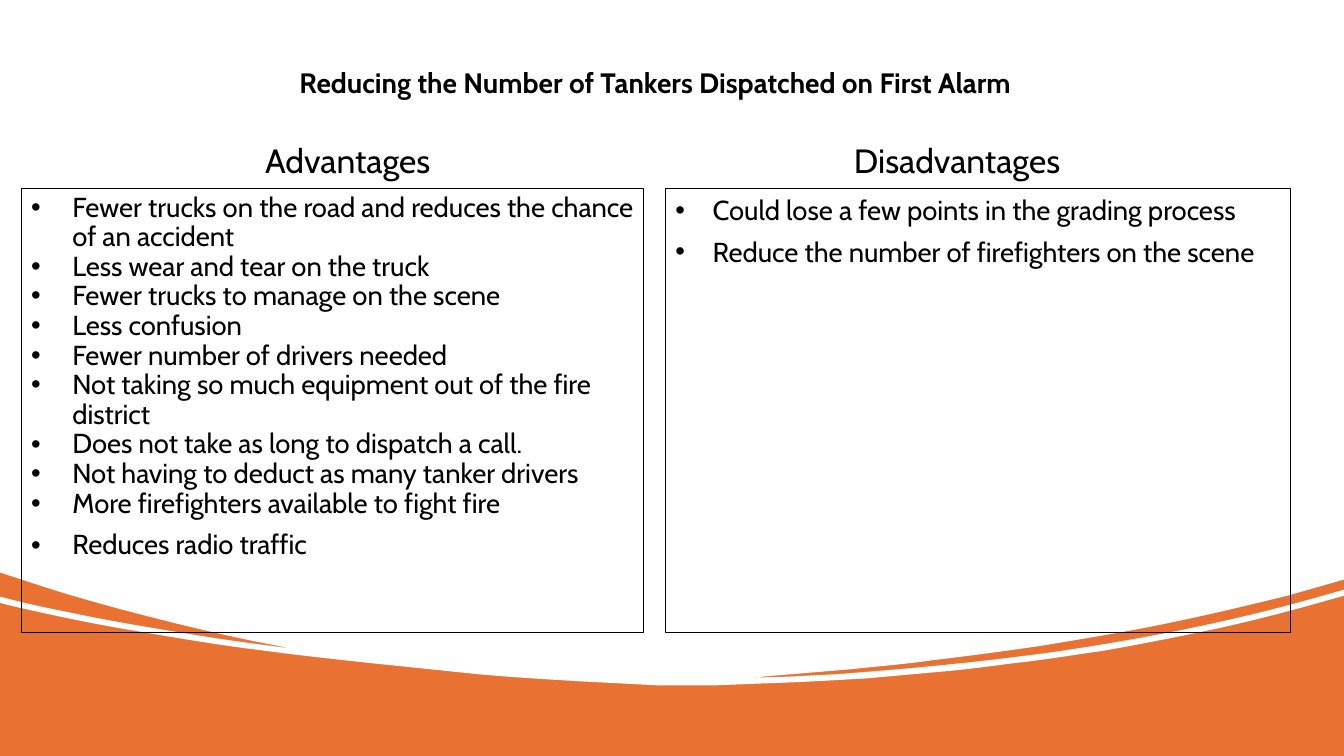
from dataclasses import dataclass

import pptx
import pptx.dml.color
import pptx.enum.shapes
import pptx.enum.text
import pptx.oxml
import pptx.oxml.ns
import pptx.util
from pptx.util import Inches

COLORS = {"orange": "E97132", "white": "FFFFFF", "black": "000000"}
FONT = "Cabin"
BODY_SIZE = 19.6
HEADING_TOP, HEADING_HEIGHT = 1.34, 0.53
PANEL_TOP, PANEL_HEIGHT = 1.87, 4.41
UNITS_PER_INCH = 1000  # resolution of the outline

# White area above the swooshes: pairs are line ends, sixes are Bezier curves
WHITE_AREA = [
    (0, 0), (13.33, 0), (13.33, 5.75), (13.19, 5.79),
    (13.05, 5.83, 12.91, 5.87, 12.77, 5.91),
    (12.32, 6.02, 11.86, 6.13, 11.4, 6.22),
    (11.04, 6.29, 10.67, 6.35, 10.31, 6.41),
    (9.96, 6.46, 9.6, 6.51, 9.25, 6.55),
    (8.98, 6.59, 8.71, 6.61, 8.44, 6.64),
    (7.6, 6.71), (7.43, 6.73),
    (7.46, 6.73, 7.49, 6.73, 7.53, 6.72),
    (7.78, 6.72, 8.04, 6.7, 8.29, 6.69),
    (8.67, 6.66, 9.05, 6.63, 9.43, 6.59),
    (9.74, 6.56, 10.06, 6.52, 10.37, 6.48),
    (10.79, 6.42, 11.21, 6.35, 11.62, 6.27),
    (12.13, 6.17, 12.63, 6.05, 13.12, 5.91),
    (13.33, 5.85), (13.33, 5.91), (12.94, 6.02),
    (12.61, 6.11, 12.29, 6.19, 11.96, 6.26),
    (11.62, 6.33, 11.27, 6.4, 10.92, 6.46),
    (10.63, 6.5, 10.34, 6.55, 10.05, 6.58),
    (9.83, 6.61, 9.6, 6.64, 9.38, 6.66),
    (8.6, 6.73),
    (8.26, 6.75, 7.92, 6.77, 7.58, 6.78),
    (7.08, 6.8), (6.54, 6.8), (5.76, 6.76),
    (5.42, 6.74, 5.09, 6.72, 4.75, 6.69),
    (3.69, 6.58),
    (3.32, 6.54, 2.95, 6.5, 2.58, 6.45),
    (2.17, 6.4, 1.76, 6.33, 1.35, 6.26),
    (0.92, 6.19, 0.5, 6.1, 0.07, 6),
    (0, 5.98), (0, 5.92), (0.08, 5.94),
    (0.27, 5.99, 0.46, 6.03, 0.66, 6.07),
    (1.08, 6.16, 1.51, 6.23, 1.94, 6.3),
    (2.24, 6.35, 2.55, 6.39, 2.86, 6.43),
    (2.85, 6.43, 2.84, 6.42, 2.82, 6.42),
    (2.28, 6.32, 1.75, 6.19, 1.22, 6.05),
    (0.96, 5.98, 0.71, 5.91, 0.46, 5.83),
    (0, 5.68),
]


@dataclass
class Column:
    heading: str
    left: float
    width: float
    heading_inset: float
    indent: float
    line_spacing: float
    gaps: list[float]  # points after each item
    items: list[str]


COLUMNS = [
    Column("Advantages", 0.21, 6.17, 2.42, 0.41, 0.9, [0] * 8 + [8.7] * 2, [
        "Fewer trucks on the road and reduces the chance of an accident",
        "Less wear and tear on the truck",
        "Fewer trucks to manage on the scene",
        "Less confusion",
        "Fewer number of drivers needed",
        "Not taking so much equipment out of the fire district",
        "Does not take as long to dispatch a call.",
        "Not having to deduct as many tanker drivers",
        "More firefighters available to fight fire",
        "Reduces radio traffic",
    ]),
    Column("Disadvantages", 6.6, 6.2, 1.87, 0.37, 1.0, [6] * 2, [
        "Could lose a few points in the grading process",
        "Reduce the number of firefighters on the scene",
    ]),
]


def color(name: str) -> pptx.dml.color.RGBColor:
    return pptx.dml.color.RGBColor.from_string(COLORS[name])


def fill_plain(shape, name: str) -> None:
    shape.fill.solid()
    shape.fill.fore_color.rgb = color(name)
    shape.line.fill.background()
    shape.shadow.inherit = False


def style_text(para, size: float, bold: bool = False) -> None:
    para.alignment = pptx.enum.text.PP_ALIGN.LEFT
    for span in para.runs:
        span.font.name = FONT
        span.font.size = pptx.util.Pt(size)
        span.font.bold = bold
        span.font.color.rgb = color("black")


def add_bullet(para, indent: float) -> None:
    properties = para._p.get_or_add_pPr()
    properties.set("marL", str(Inches(indent)))
    properties.set("indent", str(-Inches(indent)))
    for tag, name, value in (("a:buFont", "typeface", "Arial"), ("a:buChar", "char", "•")):
        element = pptx.oxml.parse_xml(f"<{tag} {pptx.oxml.ns.nsdecls('a')}/>")
        element.set(name, value)
        properties.append(element)


def curve_element(values: list[int]):
    points = "".join(f'<a:pt x="{x}" y="{y}"/>' for x, y in zip(values[::2], values[1::2]))
    return pptx.oxml.parse_xml(
        f"<a:cubicBezTo {pptx.oxml.ns.nsdecls('a')}>{points}</a:cubicBezTo>")


def draw_background(page, width: int, height: int) -> None:
    base = page.shapes.add_shape(
        pptx.enum.shapes.MSO_SHAPE.RECTANGLE, 0, 0, width, height)
    fill_plain(base, "orange")

    # White area: straight outline first, then its curved sides
    segments = [[round(v * UNITS_PER_INCH) for v in segment] for segment in WHITE_AREA]
    builder = page.shapes.build_freeform(*segments[0], scale=Inches(1) / UNITS_PER_INCH)
    builder.add_line_segments([segment[-2:] for segment in segments[1:]], close=True)
    area = builder.convert_to_shape()
    fill_plain(area, "white")
    outline = next(area._element.iter(pptx.oxml.ns.qn("a:path")))
    for side, segment in zip(list(outline), segments):
        if len(segment) == 6:
            outline.replace(side, curve_element(segment))


def draw_column(page, column: Column) -> None:
    # Heading
    box = page.shapes.add_textbox(
        Inches(column.left), Inches(HEADING_TOP), Inches(column.width), Inches(HEADING_HEIGHT))
    frame = box.text_frame
    frame.word_wrap = True
    frame.margin_left = Inches(column.heading_inset)
    frame.vertical_anchor = pptx.enum.text.MSO_ANCHOR.TOP
    frame.text = column.heading
    style_text(frame.paragraphs[0], 24)

    # Outlined list
    panel = page.shapes.add_shape(
        pptx.enum.shapes.MSO_SHAPE.RECTANGLE,
        Inches(column.left), Inches(PANEL_TOP), Inches(column.width), Inches(PANEL_HEIGHT))
    panel.fill.background()
    panel.line.color.rgb = color("black")
    panel.line.width = pptx.util.Pt(0.75)
    panel.shadow.inherit = False
    frame = panel.text_frame
    frame.word_wrap = True
    frame.margin_right = Inches(0.05)
    frame.vertical_anchor = pptx.enum.text.MSO_ANCHOR.TOP
    frame.text = "\n".join(column.items)
    for para, gap in zip(frame.paragraphs, column.gaps):
        para.line_spacing = column.line_spacing
        para.space_after = pptx.util.Pt(gap)
        style_text(para, BODY_SIZE)
        add_bullet(para, column.indent)


def place_title(page) -> None:
    title = page.shapes.title
    title.left, title.top = Inches(2.87), Inches(0.6)
    title.width, title.height = Inches(8.44), Inches(0.44)
    frame = title.text_frame
    frame.text = "Reducing the Number of Tankers Dispatched on First Alarm"
    frame.word_wrap = True
    frame.auto_size = pptx.enum.text.MSO_AUTO_SIZE.NONE
    frame.vertical_anchor = pptx.enum.text.MSO_ANCHOR.MIDDLE
    style_text(frame.paragraphs[0], 20, bold=True)
    page.shapes._spTree.append(title._element)  # bring to front


def main() -> None:
    deck = pptx.Presentation()
    deck.slide_width, deck.slide_height = Inches(13.33), Inches(7.5)
    page = deck.slides.add_slide(deck.slide_layouts.get_by_name("Title Only"))
    draw_background(page, deck.slide_width, deck.slide_height)
    for column in COLUMNS:
        draw_column(page, column)
    place_title(page)
    deck.save("out.pptx")


if __name__ == "__main__":
    main()
